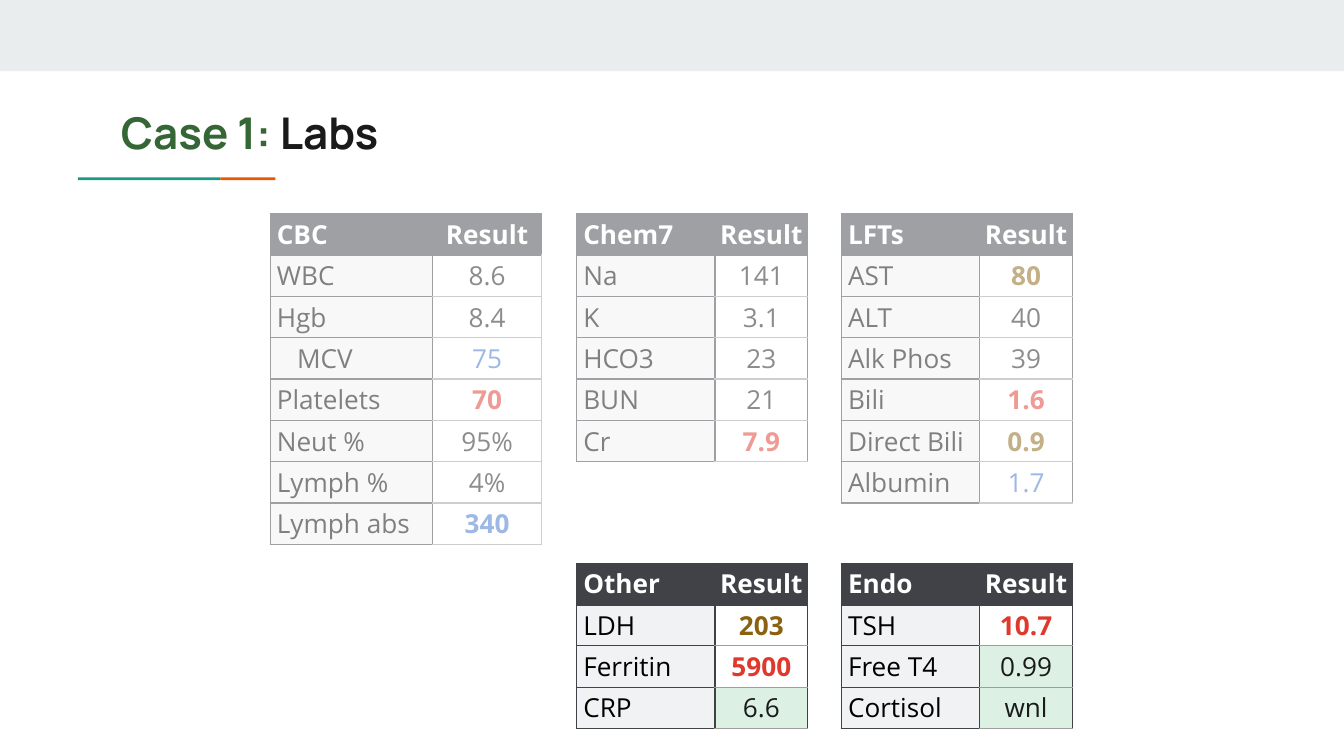
from lxml import etree
from pptx import Presentation
from pptx.enum import shapes, text
from pptx.dml import color
from pptx.oxml import ns
from pptx.util import Inches, Pt

DARK, GRAY, PALE, GREEN = "404247", "9E9E9E", "F1F2F3", "DCF1E4"
BLACK, INK, WHITE = "000000", "1A1A1A", "FFFFFF"
RED, BLUE, BROWN = "DF382C", "3B71CA", "896110"
ROW = 2.46 / 8
TOP, LOW = 1.59, 4.19       # tops of the two bands of tables
LEFT, MID, RIGHT = 2.01, 4.29, 6.26

# Each row: name, result, then optional colour, bold and result fill
CBC = [("WBC", "8.6"), ("Hgb", "8.4"), ("MCV", "75", BLUE),
       ("Platelets", "70", RED, True), ("Neut %", "95%"),
       ("Lymph %", "4%"), ("Lymph abs", "340", BLUE, True)]
CHEM = [("Na", "141"), ("K", "3.1"), ("HCO3", "23"), ("BUN", "21"),
        ("Cr", "7.9", RED, True)]
LFTS = [("AST", "80", BROWN, True), ("ALT", "40"), ("Alk Phos", "39"),
        ("Bili", "1.6", RED, True), ("Direct Bili", "0.9", BROWN, True),
        ("Albumin", "1.7", BLUE)]
OTHER = [("LDH", "203", BROWN, True), ("Ferritin", "5900", RED, True),
         ("CRP", "6.6", INK, False, GREEN)]
ENDO = [("TSH", "10.7", RED, True), ("Free T4", "0.99", INK, False, GREEN),
        ("Cortisol", "wnl", INK, False, GREEN)]


def rgb(code):
    return color.RGBColor.from_string(code)


def add_run(para, words, face, size, tint, bold):
    run = para.add_run()
    run.text = words
    font = run.font
    font.name, font.size, font.bold = face, Pt(size), bold
    font.color.rgb = rgb(tint)


def add_box(slide, box, tint, alpha=None):
    rect = slide.shapes.add_shape(shapes.MSO_SHAPE.RECTANGLE, *map(Inches, box))
    rect.shadow.inherit = False
    rect.line.fill.background()
    rect.fill.solid()
    rect.fill.fore_color.rgb = rgb(tint)
    if alpha is not None:
        code = rect.fill._xPr.find(".//" + ns.qn("a:srgbClr"))
        etree.SubElement(code, ns.qn("a:alpha"), val=str(alpha * 1000))


def set_edges(cell, edges):
    """Draw cell borders; edges maps L, R, T, B to (colour, points)."""
    props = cell._tc.get_or_add_tcPr()
    for spot, side in enumerate("LRTB"):
        tint, width = edges[side]
        line = etree.Element(ns.qn("a:ln" + side), w=str(Pt(width)))
        fill = etree.SubElement(line, ns.qn("a:solidFill"))
        etree.SubElement(fill, ns.qn("a:srgbClr"), val=tint)
        props.insert(spot, line)


def set_cell(cell, words, tint, bold, fill, edges, inset=None):
    cell.margin_left = Inches(inset or 0)
    cell.margin_right = cell.margin_top = cell.margin_bottom = 0
    cell.vertical_anchor = text.MSO_ANCHOR.MIDDLE
    para = cell.text_frame.paragraphs[0]
    para.alignment = text.PP_ALIGN.CENTER if inset is None else text.PP_ALIGN.LEFT
    add_run(para, words, "Open Sans", 14, tint, bold)
    if fill:
        cell.fill.solid()
        cell.fill.fore_color.rgb = rgb(fill)
    else:
        cell.fill.background()
    set_edges(cell, edges)


def add_labs(slide, left, top, name, rows, widths=(1.03, 0.69), rim=DARK):
    count = len(rows) + 1
    box = left, top, sum(widths), ROW * count
    grid = slide.shapes.add_table(count, 2, *map(Inches, box)).table
    grid.first_row = grid.horz_banding = False
    for col, width in zip(grid.columns, widths):
        col.width = Inches(width)
    for row in grid.rows:
        row.height = Inches(ROW)

    # Header row
    thin, thick, soft = (DARK, 0.75), (DARK, 1.5), (GRAY, 0.75)
    head = dict(L=thin, R=thin, T=thin, B=thick)
    set_cell(grid.cell(0, 0), name, WHITE, True, DARK, head, 0.05)
    set_cell(grid.cell(0, 1), "Result", WHITE, True, DARK, head)

    # Test names and results
    for at, (test, value, *style) in enumerate(rows, 1):
        tint, bold, fill = style + [INK, False, None][len(style):]
        first = at == 1
        set_cell(grid.cell(at, 0), test, BLACK, False, PALE,
                 dict(L=thin, R=thin, T=thick if first else thin, B=thin),
                 0.2 if test == "MCV" else 0.05)
        set_cell(grid.cell(at, 1), value, tint, bold, fill,
                 dict(L=thin, R=(rim, 0.75), T=thick if first else soft, B=soft))


def add_title(slide, box):
    title = slide.shapes.title
    title.left, title.top, title.width, title.height = map(Inches, box)
    frame = title.text_frame
    frame.margin_left = frame.margin_right = Inches(0.1)
    frame.margin_top = frame.margin_bottom = Inches(0.1)
    frame.vertical_anchor = text.MSO_ANCHOR.MIDDLE
    frame.auto_size = text.MSO_AUTO_SIZE.NONE
    para = frame.paragraphs[0]
    para.alignment = text.PP_ALIGN.LEFT
    add_run(para, "Case 1:", "Manrope", 23.4, "356635", True)
    add_run(para, " Labs", "Manrope", 23.4, INK, True)


def add_rule(slide, left, top):
    add_box(slide, (left, top, 1.06, 0.02), "1A9988")
    add_box(slide, (left + 1.06, top, 0.41, 0.02), "EB5600")


def main():
    deck = Presentation()
    deck.slide_width = Inches(10)
    deck.slide_height = deck.slide_width * 9 // 16
    slide = deck.slides.add_slide(deck.slide_layouts[5])

    # Top band, title and its underline
    add_box(slide, (0, 0, 10, 0.53), "E9EDEE")
    add_title(slide, (0.8, 0.69, 8.41, 0.59))
    add_rule(slide, 0.58, 1.32)

    # Earlier labs, dimmed by half-clear veils
    add_labs(slide, LEFT, TOP, "CBC", CBC, (1.21, 0.81), GRAY)
    add_labs(slide, MID, TOP, "Chem7", CHEM)
    add_labs(slide, RIGHT, TOP, "LFTs", LFTS)
    add_box(slide, (1.85, 1.45, 2.34, 2.74), WHITE, 50)

    # New labs
    add_labs(slide, MID, LOW, "Other", OTHER)
    add_labs(slide, RIGHT, LOW, "Endo", ENDO)
    add_box(slide, (4.18, 1.14, 3.94, 2.74), WHITE, 50)

    deck.save("out.pptx")


if __name__ == "__main__":
    main()
